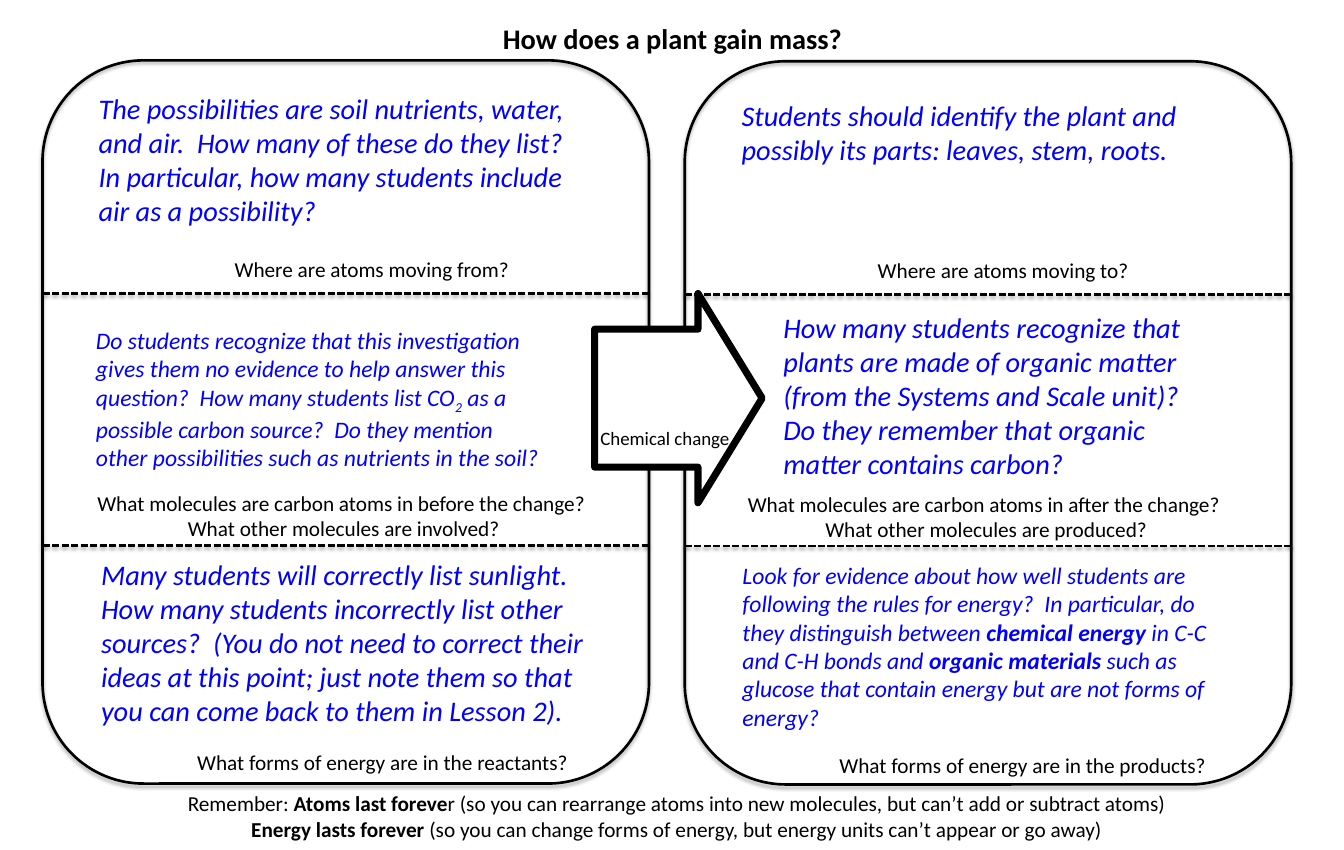
from lxml import etree
from pptx import Presentation
from pptx import util as u
from pptx.dml import color
from pptx.enum import dml, shapes, text
from pptx.oxml import ns

COLORS = {"ink": "000000", "answer": "0000FF", "paper": "FFFFFF"}
FONT = "Calibri"
PANEL_SIZE = (7.13, 8.5)
DIVIDERS = (2.74, 5.7)

REACTANTS = {
    "questions": [
        ("Where are atoms moving from?", (2.16, 2.25, 3.48, 0.4)),
        ("What molecules are carbon atoms in before the change? \n"
         "What other molecules are involved?", (0.53, 5, 6.02, 0.71)),
        ("What forms of energy are in the reactants?", (1.72, 8.05, 4.63, 0.4)),
    ],
    "answers": [
        (24, [("The possibilities are soil nutrients, water, and air.  How many of these do they "
               "list?  In particular, how many students include air as a possibility?", "")],
         (0.56, 0.31, 5.99, 1.72)),
        (20, [("Do students recognize that this investigation gives them no evidence to help "
               "answer this question?  How many students list CO", ""),
              ("2", "sub"),
              (" as a possible carbon source?  Do they mention other possibilities such as "
               "nutrients in the soil?", "")],
         (0.53, 3.07, 5.43, 1.77)),
        (24, [("Many students will correctly list sunlight.  How many students incorrectly list "
               "other sources?  (You do not need to correct their ideas at this point; just note "
               "them so that you can come back to them in Lesson 2).", "")],
         (0.59, 5.79, 5.96, 2.12)),
    ],
}
PRODUCTS = {
    "questions": [
        ("Where are atoms moving to?", (2.17, 2.25, 3.19, 0.4)),
        ("What molecules are carbon atoms in after the change? \n"
         "What other molecules are produced?", (0.63, 5, 5.83, 0.71)),
        ("What forms of energy are in the products?", (1.72, 8.07, 4.57, 0.4)),
    ],
    "answers": [
        (24, [("Students should identify the plant and possibly its parts: leaves, stem, roots.",
               "")], (0.57, 0.38, 5.99, 0.91)),
        (24, [("How many students recognize that plants are made of organic matter (from the "
               "Systems and Scale unit)?  Do they remember that organic matter contains carbon?",
               "")], (1.06, 2.88, 5.35, 2.12)),
        (20, [("Look for evidence about how well students are following the rules for energy?  "
               "In particular, do they distinguish between ", ""),
              ("chemical energy", "bold"),
              (" in C-C and C-H bonds and ", ""),
              ("organic materials ", "bold"),
              ("such as glucose that contain energy but are not forms of energy?", "")],
         (0.58, 5.82, 5.88, 2.12)),
    ],
}
REMINDER = [
    ("Remember: ", ""),
    ("Atoms last foreve", "bold"),
    ("r (so you can rearrange atoms into new molecules, but can’t add or subtract atoms)", ""),
    ("\n", ""),
    ("Energy lasts forever ", "bold"),
    ("(so you can change forms of energy, but energy units can’t appear or go away)", ""),
]


def rgb(name):
    """Return the named colour."""
    return color.RGBColor.from_string(COLORS[name])


def add_text(parent, box, spans, size, ink="ink", centered=False, wrap=True, italic=False):
    """Add a text box of styled spans, where a newline span breaks the line."""
    label = parent.shapes.add_textbox(*map(u.Inches, box))
    frame = label.text_frame
    frame.word_wrap = wrap
    frame.auto_size = text.MSO_AUTO_SIZE.SHAPE_TO_FIT_TEXT
    para = frame.paragraphs[0]
    para.alignment = text.PP_ALIGN.CENTER if centered else text.PP_ALIGN.LEFT
    for words, style in spans:
        if words == "\n":
            para.add_line_break()
            continue
        span = para.add_run()
        span.text = words
        span.font.name, span.font.size = FONT, u.Pt(size)
        span.font.color.rgb = rgb(ink)
        span.font.bold, span.font.italic = style == "bold", italic
        if style == "sub":
            span.font._element.set("baseline", "-25000")
    return frame


def add_shadow(shape, distance, opacity):
    """Give a shape or connector a soft shadow straight below it."""
    effects = etree.SubElement(shape._element.spPr, ns.qn("a:effectLst"))
    shadow = etree.SubElement(effects, ns.qn("a:outerShdw"), blurRad=str(u.Pt(3.1)),
                              dist=str(u.Pt(distance)), dir="5400000", rotWithShape="0")
    shade = etree.SubElement(shadow, ns.qn("a:srgbClr"), val=COLORS["ink"])
    etree.SubElement(shade, ns.qn("a:alpha"), val=str(opacity * 1000))


def add_panel(page, box, content):
    """Draw a rounded panel of three rows, each with an answer and a question."""
    left, top, width, height = box
    group = page.shapes.add_group_shape()
    outline = group.shapes.add_shape(shapes.MSO_SHAPE.ROUNDED_RECTANGLE, *map(u.Inches, box))
    outline.fill.background()
    outline.line.color.rgb = rgb("ink")
    outline.line.width = u.Pt(2.25)
    add_shadow(outline, 1.8, 35)
    for offset in DIVIDERS:
        divider = group.shapes.add_connector(
            shapes.MSO_CONNECTOR.STRAIGHT, u.Inches(left), u.Inches(top + offset),
            u.Inches(left + width), u.Inches(top + offset))
        divider.line.color.rgb = rgb("ink")
        divider.line.width = u.Pt(2)
        divider.line.dash_style = dml.MSO_LINE.SQUARE_DOT
        add_shadow(divider, 1.6, 38)
    for words, (x, y, w, h) in content["questions"]:
        first, *rest = words.split("\n")
        spans = [(first, "")] + [span for line in rest for span in (("\n", ""), (line, ""))]
        add_text(group, (left + x, top + y, w, h), spans, 18, centered=bool(rest), wrap=False)
    for size, spans, (x, y, w, h) in content["answers"]:
        add_text(group, (left + x, top + y, w, h), spans, size, "answer", italic=True)


def add_change_arrow(page, box):
    """Draw the labelled arrow that joins the two panels."""
    left, top = box[:2]
    arrow = page.shapes.add_shape(shapes.MSO_SHAPE.RIGHT_ARROW, *map(u.Inches, box))
    arrow.adjustments[0], arrow.adjustments[1] = 0.659, 0.383
    arrow.shadow.inherit = False
    arrow.fill.solid()
    arrow.fill.fore_color.rgb = rgb("paper")
    arrow.line.color.rgb = rgb("ink")
    arrow.line.width = u.Pt(6)
    add_text(page, (left - 0.03, top + 1.52, 1.74, 0.37), [("Chemical change", "")], 16,
             wrap=False)


def add_heading(page, box):
    """Place the slide's title."""
    frame = add_text(page, box, [("How does a plant gain mass?", "bold")], 24, centered=True)
    frame.auto_size = text.MSO_AUTO_SIZE.NONE
    frame.vertical_anchor = text.MSO_ANCHOR.MIDDLE


def add_reminder(page, box):
    """Place the two rules below the panels."""
    frame = add_text(page, box, REMINDER, 18, centered=True)
    frame.auto_size = text.MSO_AUTO_SIZE.NONE
    frame.margin_top = u.Inches(0.07)


def main():
    """Build the slide and save it."""
    deck = Presentation()
    deck.slide_width, deck.slide_height = u.Inches(15.8), u.Inches(9.99)
    page = deck.slides.add_slide(deck.slide_layouts[6])
    add_heading(page, (1.19, 0.18, 13.43, 0.53))
    add_panel(page, (0.5, 0.71, *PANEL_SIZE), REACTANTS)
    add_panel(page, (8.05, 0.72, *PANEL_SIZE), PRODUCTS)
    add_change_arrow(page, (6.99, 3.45, 1.97, 2.46))
    add_reminder(page, (1.06, 9.22, 13.79, 0.59))
    deck.save("out.pptx")


if __name__ == "__main__":
    main()
